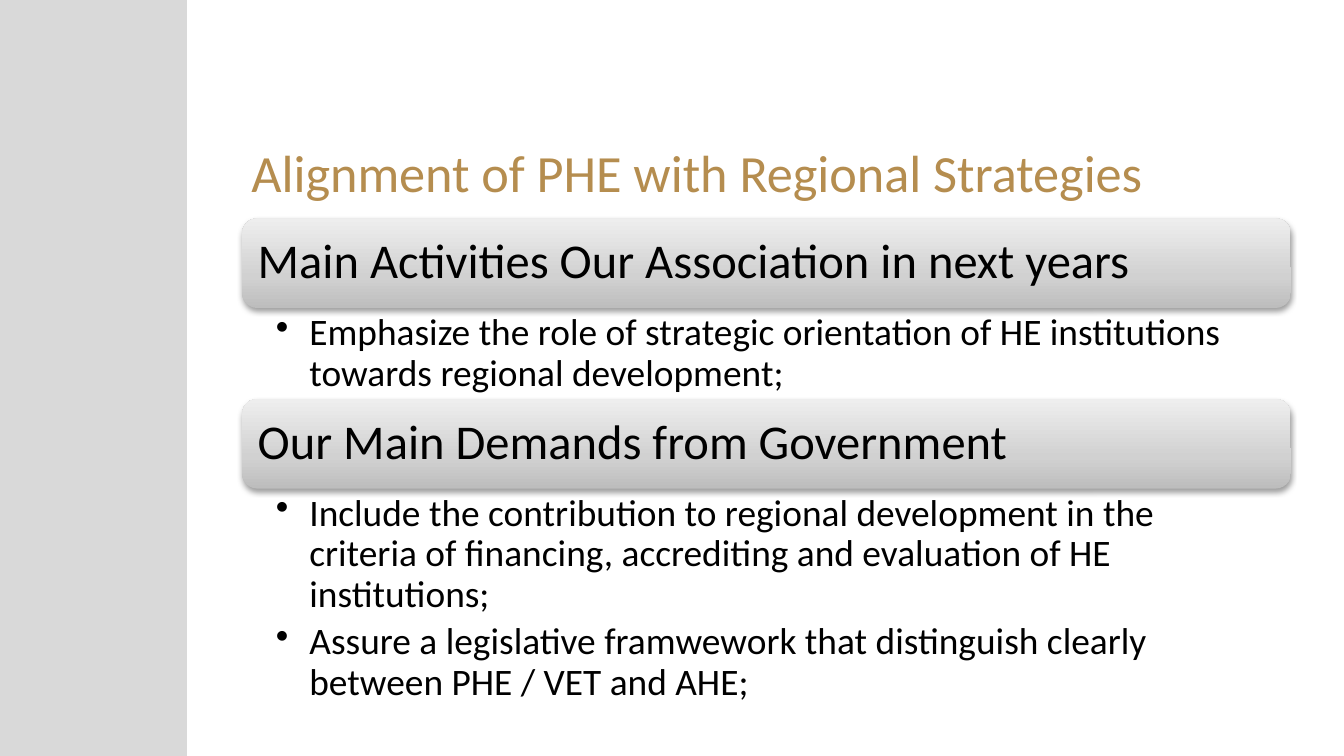
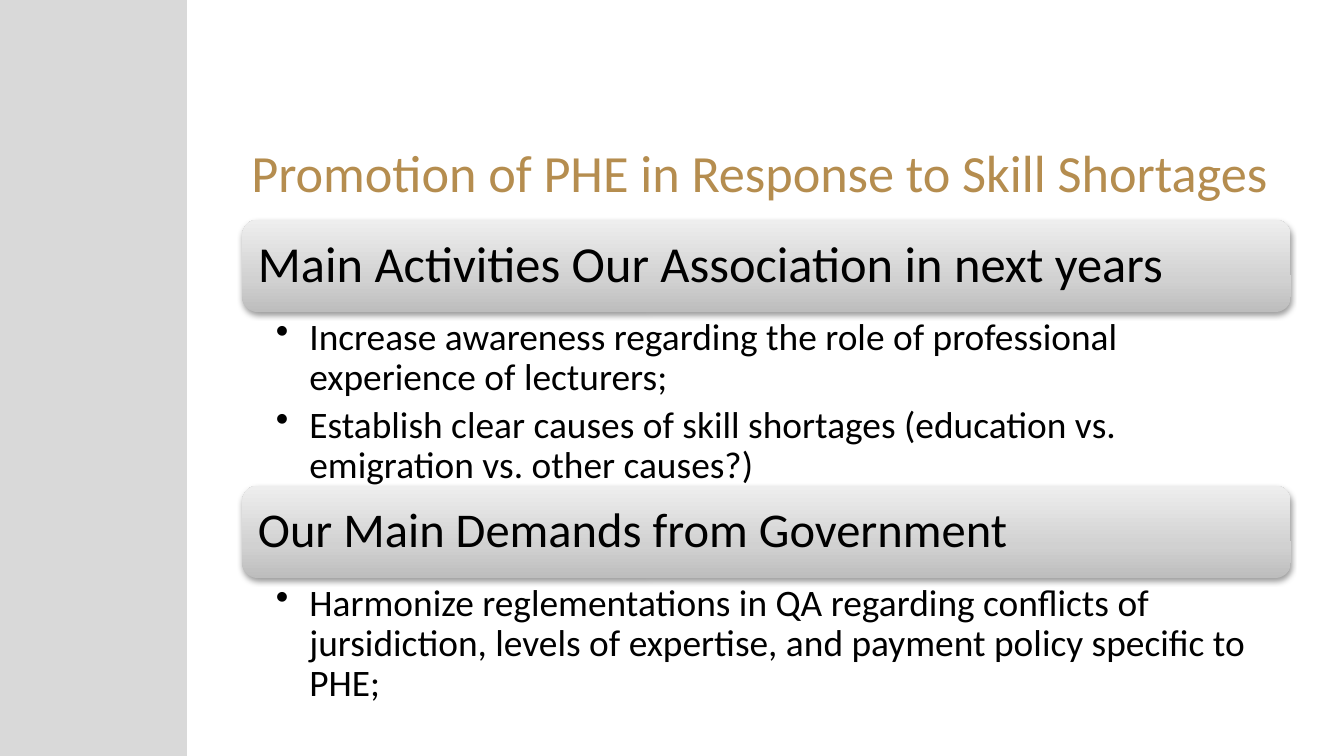
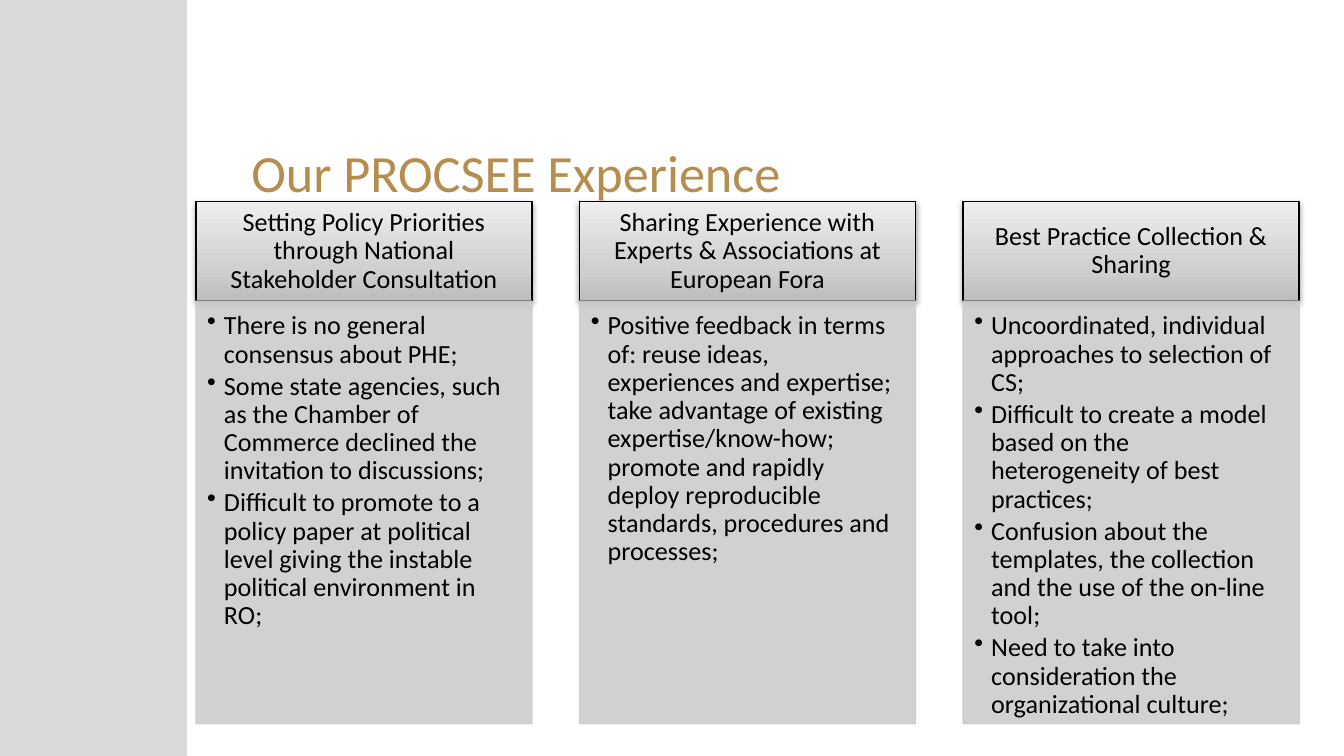
from lxml.etree import SubElement
from pptx import Presentation
from pptx.dml.color import RGBColor
from pptx.enum.shapes import MSO_SHAPE as Preset
from pptx.enum.text import MSO_ANCHOR as Anchor, PP_ALIGN as Align
from pptx.oxml import parse_xml
from pptx.oxml.ns import nsdecls, qn
from pptx.util import Pt

PX = 9525  # EMU in one px, 96 px to the inch
FONT = "Calibri"
COLORS = {
    "band": "D9D9D9",
    "title": "B58D4F",
    "text": "000000",
    "panel": "CCCCCC",
    "header_bottom": "BDBDBD",
    "header_middle": "D1D1D1",
    "header_top": "EEEEEE",
}
RGB = {name: RGBColor.from_string(value) for name, value in COLORS.items()}

GRADIENT = f"""<a:gradFill {nsdecls("a")} rotWithShape="1"><a:gsLst>
<a:gs pos="0"><a:srgbClr val="{COLORS['header_bottom']}"/></a:gs>
<a:gs pos="35000"><a:srgbClr val="{COLORS['header_middle']}"/></a:gs>
<a:gs pos="100000"><a:srgbClr val="{COLORS['header_top']}"/></a:gs>
</a:gsLst><a:lin ang="16200000" scaled="0"/></a:gradFill>"""
SHADOW = f"""<a:effectLst {nsdecls("a")}>
<a:outerShdw blurRad="40000" dist="20000" dir="5400000" rotWithShape="0">
<a:srgbClr val="000000"><a:alpha val="38000"/></a:srgbClr>
</a:outerShdw></a:effectLst>"""

ACTIVITIES = "Main Activities Our Association in next years"
DEMANDS = "Our Main Demands from Government"

# Sections: header top, header height, header size, header text, list height, list
SECTION_SLIDES = [
    ("Alignment of PHE with Regional Strategies", [
        (156, 64, 26, ACTIVITIES, 62, [
            "Emphasize the role of strategic orientation of HE institutions "
            "towards regional development;",
        ]),
        (285, 64, 26, DEMANDS, 153, [
            "Include the contribution to regional development in the criteria "
            "of financing, accrediting and evaluation of HE institutions;",
            "Assure a legislative framwework that distinguish clearly between "
            "PHE / VET and AHE;",
        ]),
    ]),
    ("Promotion of PHE in Response to Skill Shortages", [
        (157, 66, 27, ACTIVITIES, 124, [
            "Increase awareness regarding the role of professional experience "
            "of lecturers;",
            "Establish clear causes of skill shortages (education vs. "
            "emigration vs. other causes?)",
        ]),
        (347, 66, 26, DEMANDS, 90, [
            "Harmonize reglementations in QA regarding conflicts of "
            "jursidiction, levels of expertise, and payment policy specific "
            "to PHE;",
        ]),
    ]),
]

EXPERIENCE_COLUMNS = [
    ("Setting Policy Priorities through National Stakeholder Consultation", [
        "There is no general consensus about PHE;",
        "Some state agencies, such as the Chamber of Commerce declined the "
        "invitation to discussions;",
        "Difficult to promote to a policy paper at political level giving the "
        "instable political environment in RO;",
    ]),
    ("Sharing Experience with Experts & Associations at European Fora", [
        "Positive feedback in terms of: reuse ideas, experiences and "
        "expertise; take advantage of existing expertise/know-how; promote "
        "and rapidly deploy reproducible standards, procedures and processes;",
    ]),
    ("Best Practice Collection & Sharing", [
        "Uncoordinated, individual approaches to selection of CS;",
        "Difficult to create a model based on the heterogeneity of best "
        "practices;",
        "Confusion about the templates, the collection and the use of the "
        "on-line tool;",
        "Need to take into consideration the organizational culture;",
    ]),
]


def write_text(shape, texts, size, insets, anchor, align=Align.LEFT, indent=0, gap=0):
    """Fill a shape with paragraphs; a positive indent (px) adds bullets."""
    frame = shape.text_frame
    frame.word_wrap = True
    frame.vertical_anchor = anchor
    (frame.margin_left, frame.margin_top,
     frame.margin_right, frame.margin_bottom) = (inset * PX for inset in insets)
    frame.text = "\n".join(texts)
    for paragraph in frame.paragraphs:
        if indent:
            properties = paragraph._p.get_or_add_pPr()
            properties.set("marL", str(indent * PX))
            properties.set("indent", str(-indent * PX))
            SubElement(properties, qn("a:buChar"), char="•")
        paragraph.alignment = align
        paragraph.line_spacing = 0.9
        paragraph.space_after = Pt(gap)
        paragraph.font.name = FONT
        paragraph.font.size = Pt(size)
        paragraph.font.color.rgb = RGB["text"]


def add_header(slide, preset, left, top, width, height):
    """Add a header bar with the grey gradient and soft shadow."""
    header = slide.shapes.add_shape(preset, left * PX, top * PX, width * PX, height * PX)
    properties = header.element.spPr
    properties.insert(2, parse_xml(GRADIENT))
    if preset == Preset.RECTANGLE:
        header.line.color.rgb = RGB["text"]
        header.line.width = Pt(0.75)
    else:
        header.line.fill.background()
    properties.append(parse_xml(SHADOW))
    return header


presentation = Presentation()
presentation.slide_width = 960 * PX
presentation.slide_height = 540 * PX

# Shared layout: title place and side band
layout = presentation.slide_layouts.get_by_name("Title Only")
layout_title = layout.placeholders[0]
layout_title.left, layout_title.top = 170 * PX, 94 * PX
layout_title.width, layout_title.height = 749 * PX, 57 * PX

titles = [title for title, _ in SECTION_SLIDES] + ["Our PROCSEE Experience"]
slides = [presentation.slides.add_slide(layout) for _ in titles]

band = slides[0].shapes.add_shape(Preset.RECTANGLE, 0, 0, 132 * PX, 540 * PX)
band.shadow.inherit = False
band.fill.solid()
band.fill.fore_color.rgb = RGB["band"]
band.line.color.rgb = RGB["band"]
band.line.width = Pt(2)
layout.shapes.element.insert(2, band.element)

for slide, title in zip(slides, titles):
    frame = slide.shapes.title.text_frame
    frame.text = title
    frame.vertical_anchor = Anchor.MIDDLE
    paragraph = frame.paragraphs[0]
    paragraph.alignment = Align.LEFT
    paragraph.font.name = FONT
    paragraph.font.size = Pt(28)
    paragraph.font.color.rgb = RGB["title"]

# Slides 1 and 2: header bars with lists below
SECTION_LEFT, SECTION_WIDTH = 173, 749
for slide, (_, sections) in zip(slides, SECTION_SLIDES):
    for top, height, size, heading, list_height, items in sections:
        header = add_header(slide, Preset.ROUNDED_RECTANGLE,
                            SECTION_LEFT, top, SECTION_WIDTH, height)
        write_text(header, [heading], size, (8, 8, 8, 8), Anchor.MIDDLE)
        list_box = slide.shapes.add_textbox(
            SECTION_LEFT * PX, (top + height) * PX, SECTION_WIDTH * PX, list_height * PX)
        write_text(list_box, items, 20, (24, 4, 19, 4), Anchor.TOP, indent=24, gap=4)

# Slide 3: three columns
COLUMN_TOP, COLUMN_WIDTH, HEADER_HEIGHT, PANEL_HEIGHT = 144, 240, 71, 302
for index, (heading, items) in enumerate(EXPERIENCE_COLUMNS):
    left = 140 + index * 274
    header = add_header(slides[-1], Preset.RECTANGLE,
                        left, COLUMN_TOP, COLUMN_WIDTH, HEADER_HEIGHT)
    write_text(header, [heading], 14, (11, 6, 11, 6), Anchor.MIDDLE, Align.CENTER)
    panel = slides[-1].shapes.add_shape(
        Preset.RECTANGLE, left * PX, (COLUMN_TOP + HEADER_HEIGHT) * PX,
        COLUMN_WIDTH * PX, PANEL_HEIGHT * PX)
    panel.shadow.inherit = False
    panel.fill.solid()
    panel.fill.fore_color.rgb = RGB["panel"]
    panel.line.color.rgb = RGB["panel"]
    panel.line.width = Pt(0.75)
    for color in panel.element.spPr.iter(qn("a:srgbClr")):
        SubElement(color, qn("a:alpha"), val="90000")
    write_text(panel, items, 14, (8, 8, 11, 12), Anchor.TOP, indent=12, gap=2)

presentation.save("out.pptx")
